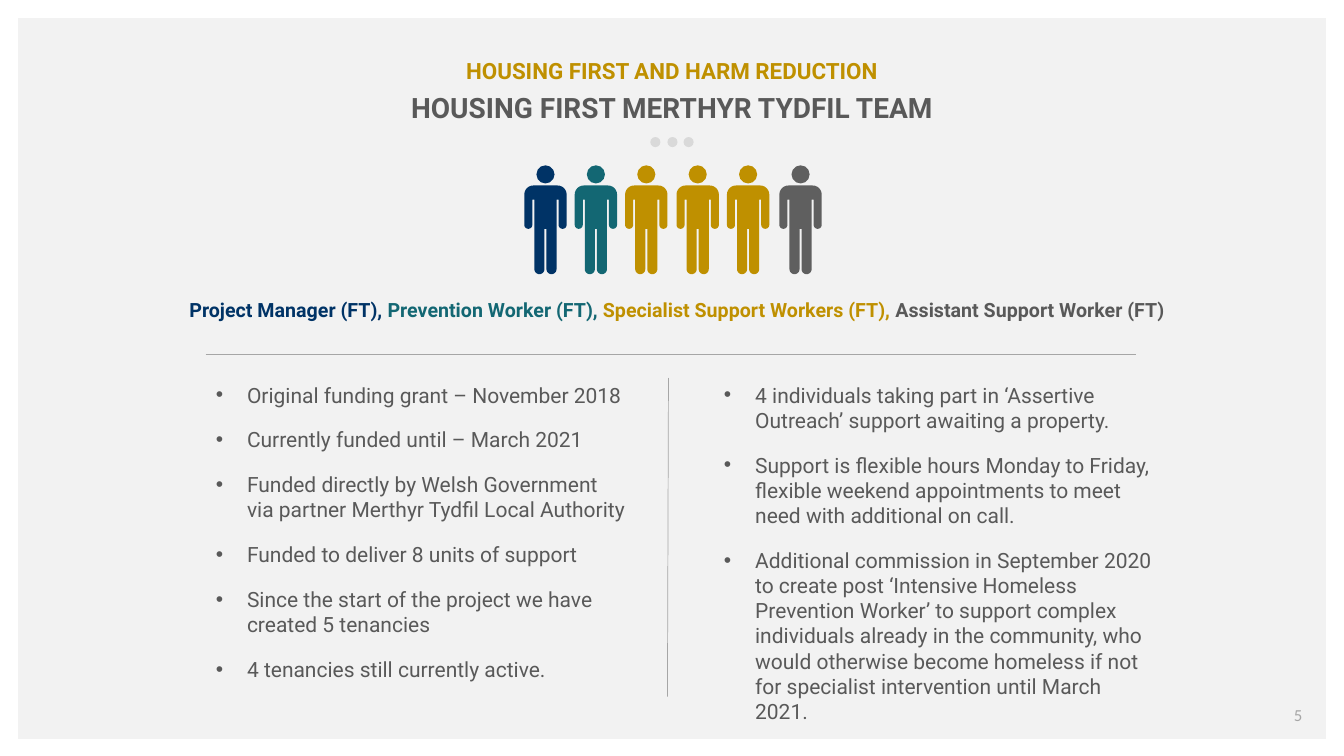
from math import cos, pi, sin

from lxml.etree import SubElement
from pptx import Presentation
from pptx.dml.color import RGBColor
from pptx.enum.shapes import MSO_CONNECTOR as Connector, MSO_SHAPE as Shape
from pptx.enum.text import MSO_ANCHOR as Anchor, MSO_AUTO_SIZE as AutoSize, PP_ALIGN as Align
from pptx.oxml.ns import qn
from pptx.util import Emu, Pt

PX = 9144  # EMU per px, 100 px to the inch
NAVY, TEAL, GOLD, GREY, TEXT = "003366", "136773", "BF9000", "5F5F5F", "595959"
PANEL, DOT, RULE = "F2F2F2", "D9D9D9", "A6A6A6"

TITLE_LINES = [
    ("HOUSING FIRST AND HARM REDUCTION", 16, GOLD, 5),
    ("HOUSING FIRST MERTHYR TYDFIL TEAM", 20, TEXT, 0),
]
ROLES = [
    ("Project Manager (FT), ", NAVY),
    ("Prevention Worker (FT), ", TEAL),
    ("Specialist Support Workers (FT), ", GOLD),
    ("Assistant Support Worker (FT)", TEXT),
]
PEOPLE = [(520, NAVY), (570, TEAL), (620, GOLD), (671, GOLD), (721, GOLD), (773, GREY)]
COLUMNS = [
    [
        "Original funding grant – November 2018",
        "Currently funded until – March 2021",
        "Funded directly by Welsh Government\nvia partner Merthyr Tydfil Local Authority",
        "Funded to deliver 8 units of support",
        "Since the start of the project we have created 5 tenancies",
        "4 tenancies still currently active.",
    ],
    [
        "4 individuals taking part in ‘Assertive Outreach’ support awaiting a property.",
        "Support is flexible hours Monday to Friday, flexible weekend appointments "
        "to meet need with additional on call.",
        "Additional commission in September 2020 to create post ‘Intensive Homeless "
        "Prevention Worker’ to support complex individuals already in the community, "
        "who would otherwise become homeless if not for specialist intervention "
        "until March 2021.",
    ],
]
PAGE_NUMBER = "5"

DOT_LEFTS = (645, 662, 678)
RULES = [(204, 352, 1127, 352), (663, 375, 662, 691)]
COLUMN_LEFT, COLUMN_TOP, COLUMN_WIDTH, COLUMN_HEIGHT, COLUMN_STEP = 204, 374, 445, 350, 504
BULLET_INDENT = 31

# Right half of a person's body, from the shoulder to the crotch: x, y, corner radius
BODY_TOP, BODY_WIDTH, HEAD_TOP, HEAD_SIZE = 184, 42, 164, 18
HALF_BODY = [
    (42, 0, 9), (42, 43, 4), (34, 43, 4), (34, 14, 0),
    (32, 14, 0), (32, 88, 5), (22, 88, 5), (22, 43, 0),
]


def px(value):
    return Emu(round(value * PX))


def rgb(color):
    return RGBColor.from_string(color)


def paint(shape, color):
    shape.shadow.inherit = False
    shape.fill.solid()
    shape.fill.fore_color.rgb = rgb(color)
    shape.line.fill.background()


def add_filled(shapes, kind, box, color):
    shape = shapes.add_shape(kind, *map(px, box))
    paint(shape, color)
    return shape


def add_run(paragraph, text, size, color, bold=False, font="Roboto"):
    run = paragraph.add_run()
    run.text = text
    run.font.name = font
    run.font.size = Pt(size)
    run.font.bold = bold
    run.font.color.rgb = rgb(color)


def place(shape, box, margins=(10, 5), anchor=Anchor.TOP):
    """Set a text shape's box and frame settings, and return its frame."""
    shape.left, shape.top, shape.width, shape.height = map(px, box)
    frame = shape.text_frame
    frame.word_wrap = True
    frame.auto_size = AutoSize.NONE
    frame.vertical_anchor = anchor
    frame.margin_left = frame.margin_right = px(margins[0])
    frame.margin_top = frame.margin_bottom = px(margins[1])
    return frame


def paragraphs_for(frame, items):
    """Yield each item with its own paragraph."""
    for index, item in enumerate(items):
        yield item, frame.add_paragraph() if index else frame.paragraphs[0]


def rounded_outline(corners, steps=6):
    """Replace each right-angled corner by points along its arc."""
    points = []
    for index, (x, y, radius) in enumerate(corners):
        if not radius:
            points.append((x, y))
            continue
        before, after = corners[index - 1], corners[(index + 1) % len(corners)]
        back, ahead = [
            ((near[0] > x) - (near[0] < x), (near[1] > y) - (near[1] < y))
            for near in (before, after)
        ]
        for step in range(steps + 1):
            angle = step / steps * pi / 2
            along_ahead, along_back = radius * (1 - cos(angle)), radius * (1 - sin(angle))
            points.append((
                x + along_ahead * ahead[0] + along_back * back[0],
                y + along_ahead * ahead[1] + along_back * back[1],
            ))
    return points


def add_person(shapes, left, color):
    head_left = left + (BODY_WIDTH - HEAD_SIZE) / 2
    add_filled(shapes, Shape.OVAL, (head_left, HEAD_TOP, HEAD_SIZE, HEAD_SIZE), color)
    mirrored = [(BODY_WIDTH - x, y, radius) for x, y, radius in reversed(HALF_BODY)]
    outline = [
        (px(left + x), px(BODY_TOP + y)) for x, y in rounded_outline(HALF_BODY + mirrored)
    ]
    builder = shapes.build_freeform(*outline[0], scale=1.0)
    builder.add_line_segments(outline[1:], close=True)
    paint(builder.convert_to_shape(), color)


def add_rule(shapes, ends):
    line = shapes.add_connector(Connector.STRAIGHT, *map(px, ends))
    line.line.color.rgb = rgb(RULE)
    line.line.width = Pt(0.5)
    SubElement(line.element.spPr, qn("a:effectLst"))


def add_bullet(paragraph):
    properties = paragraph._p.get_or_add_pPr()
    properties.set("marL", str(px(BULLET_INDENT)))
    properties.set("indent", str(-px(BULLET_INDENT)))
    SubElement(properties, qn("a:buFont")).set("typeface", "Arial")
    SubElement(properties, qn("a:buChar")).set("char", "•")


def main():
    presentation = Presentation()
    presentation.slide_width, presentation.slide_height = px(1333), px(750)
    slide = presentation.slides.add_slide(presentation.slide_layouts[3])
    shapes = slide.shapes
    title, *bodies = slide.placeholders

    panel = add_filled(shapes, Shape.RECTANGLE, (18, 18, 1297, 715), PANEL)
    title.element.addprevious(panel.element)

    frame = place(title, (40, 56, 1253, 68), (0, 0), Anchor.MIDDLE)
    for (text, size, color, gap), paragraph in paragraphs_for(frame, TITLE_LINES):
        paragraph.alignment = Align.CENTER
        paragraph.space_after = Pt(gap)
        add_run(paragraph, text, size, color, bold=True)

    for column, (body, items) in enumerate(zip(bodies, COLUMNS)):
        left = COLUMN_LEFT + column * COLUMN_STEP
        frame = place(body, (left, COLUMN_TOP, COLUMN_WIDTH, COLUMN_HEIGHT))
        for text, paragraph in paragraphs_for(frame, items):
            paragraph.space_before, paragraph.space_after = Pt(0), Pt(14)
            add_bullet(paragraph)
            for index, line in enumerate(text.split("\n")):
                if index:
                    paragraph.add_line_break()
                add_run(paragraph, line, 15, TEXT)

    team = shapes.add_group_shape()
    for left, color in PEOPLE:
        add_person(team.shapes, left, color)

    roles = place(shapes.add_textbox(0, 0, 0, 0), (31, 291, 1281, 34)).paragraphs[0]
    roles.alignment = Align.CENTER
    for text, color in ROLES:
        add_run(roles, text, 14, color, bold=True)

    dots = shapes.add_group_shape()
    for left in DOT_LEFTS:
        add_filled(dots.shapes, Shape.OVAL, (left, 136, 10, 10), DOT)
    for ends in RULES:
        add_rule(shapes, ends)

    number = place(shapes.add_textbox(0, 0, 0, 0), (1261, 694, 53, 30)).paragraphs[0]
    number.alignment = Align.CENTER
    add_run(number, PAGE_NUMBER, 12, RULE, font="Calibri")

    presentation.save("out.pptx")


if __name__ == "__main__":
    main()
